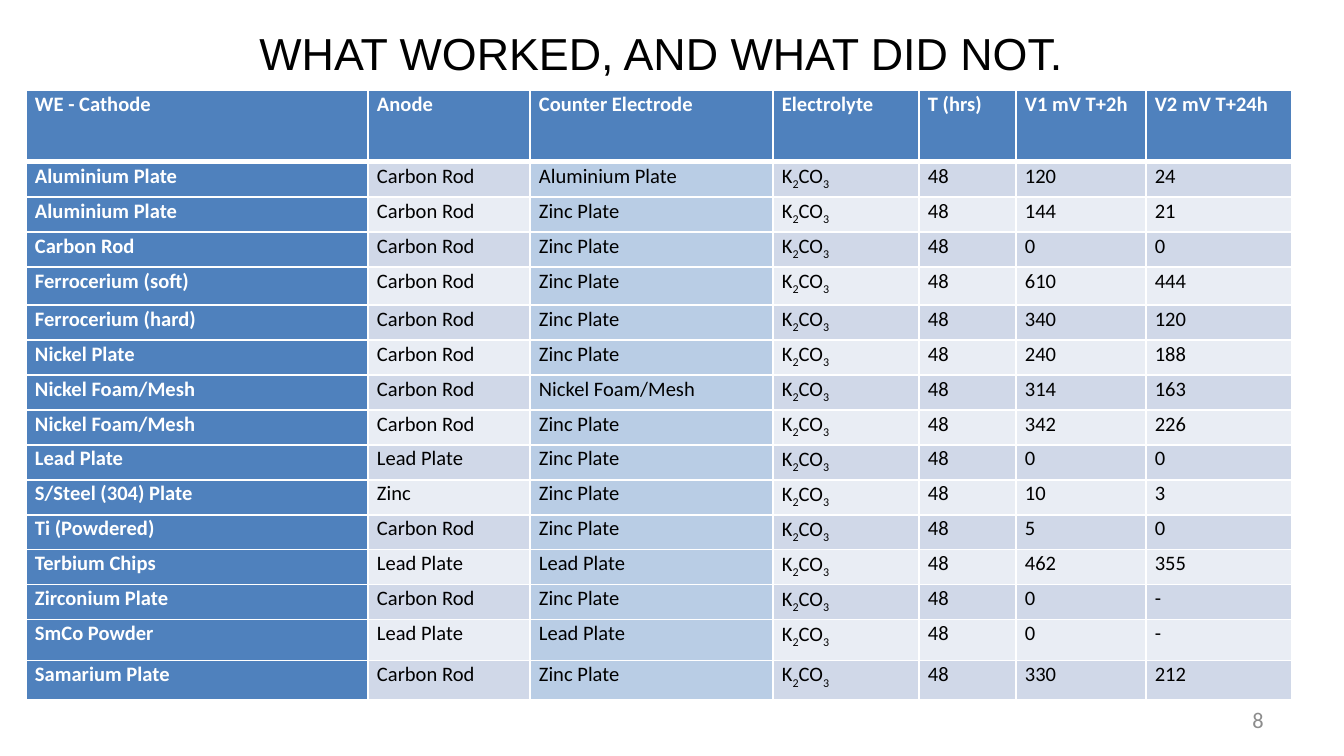
from lxml import etree
from pptx import Presentation
from pptx import util as u
from pptx.dml.color import RGBColor
from pptx.enum import shapes, text
from pptx.oxml import ns

PX = 9144000 / 1344

THEME = {
    "white": "FFFFFF", "black": "000000", "grey": "8C8C8C",
    "head": "4F81BD", "accent": "B9CDE5", "bands": ("E9EDF4", "D0D8E8"),
    "title": {"name": "Arial", "size": u.Pt(24)},
    "page": {"name": "Calibri", "size": u.Pt(12)},
    "cell": {"name": "Calibri", "size": u.Pt(11), "bold": False},
    "label": {"name": "Calibri", "size": u.Pt(11), "bold": True},
    "line": 1, "rule": 3,
}

COLS = (342, 162, 243, 146, 97, 130, 146)
ROWS = (72, *[35] * 3, 38, *[35] * 9, 41, 39)
HEADS = ("WE - Cathode", "Anode", "Counter Electrode", "Electrolyte",
         "T (hrs)", "V1 mV T+2h", "V2 mV T+24h")
SALT = "K2CO3"
HOURS = "48"
# cathode, anode, counter electrode, V1, V2
TESTS = (
    ("Aluminium Plate", "Carbon Rod", "Aluminium Plate", "120", "24"),
    ("Aluminium Plate", "Carbon Rod", "Zinc Plate", "144", "21"),
    ("Carbon Rod", "Carbon Rod", "Zinc Plate", "0", "0"),
    ("Ferrocerium (soft)", "Carbon Rod", "Zinc Plate", "610", "444"),
    ("Ferrocerium (hard)", "Carbon Rod", "Zinc Plate", "340", "120"),
    ("Nickel Plate", "Carbon Rod", "Zinc Plate", "240", "188"),
    ("Nickel Foam/Mesh", "Carbon Rod", "Nickel Foam/Mesh", "314", "163"),
    ("Nickel Foam/Mesh", "Carbon Rod", "Zinc Plate", "342", "226"),
    ("Lead Plate", "Lead Plate", "Zinc Plate", "0", "0"),
    ("S/Steel (304) Plate", "Zinc", "Zinc Plate", "10", "3"),
    ("Ti (Powdered)", "Carbon Rod", "Zinc Plate", "5", "0"),
    ("Terbium Chips", "Lead Plate", "Lead Plate", "462", "355"),
    ("Zirconium Plate", "Carbon Rod", "Zinc Plate", "0", "-"),
    ("SmCo Powder", "Lead Plate", "Lead Plate", "0", "-"),
    ("Samarium Plate", "Carbon Rod", "Zinc Plate", "330", "212"),
)


def px(n):
    return u.Emu(round(n * PX))


def rgb(code):
    return RGBColor.from_string(code)


def apply(item, values):
    for key, value in values.items():
        setattr(item, key, value)


def write(para, words, style, color):
    run = para.add_run()
    run.text = words
    apply(run.font, style)
    run.font.color.rgb = rgb(color)
    return run


def paint(item, color):
    item.fill.solid()
    item.fill.fore_color.rgb = rgb(color)


def edge(cell, side, width):
    line = etree.SubElement(cell._tc.get_or_add_tcPr(), ns.qn(f"a:ln{side}"),
                            w=str(u.Pt(width)))
    fill = etree.SubElement(line, ns.qn("a:solidFill"))
    etree.SubElement(fill, ns.qn("a:srgbClr"), val=THEME["white"])


def fill_cell(cell, words, row, col):
    label = row == 0 or col == 0
    for side in "LRTB":
        thick = (row, side) in ((0, "B"), (1, "T"))
        edge(cell, side, THEME["rule" if thick else "line"])
    if label:
        paint(cell, THEME["head"])
    else:
        paint(cell, THEME["accent"] if col == 2 else THEME["bands"][row % 2])
    apply(cell, {"margin_left": px(9), "margin_right": px(9),
                 "margin_top": 0, "margin_bottom": 0})
    para = cell.text_frame.paragraphs[0]
    para.line_spacing = 1.06
    style = THEME["label" if label else "cell"]
    color = THEME["white" if label else "black"]
    # The digits of the formula are subscripts.
    parts = ("K", "2", "CO", "3") if words == SALT else (words,)
    for part in parts:
        run = write(para, part, style, color)
        if len(parts) > 1 and part.isdigit():
            run._r.get_or_add_rPr().set("baseline", "-25000")


def add_grid(slide, box):
    grid = slide.shapes.add_table(len(ROWS), len(COLS), *map(px, box)).table
    apply(grid, {"first_row": False, "horz_banding": False})
    for col, wide in zip(grid.columns, COLS):
        col.width = px(wide)
    for row, high in zip(grid.rows, ROWS):
        row.height = px(high)
    lines = [HEADS] + [(*t[:3], SALT, HOURS, *t[3:]) for t in TESTS]
    for r, line in enumerate(lines):
        for c, words in enumerate(line):
            fill_cell(grid.cell(r, c), words, r, c)


def add_title(slide, box):
    bar = slide.shapes.add_shape(shapes.MSO_SHAPE.RECTANGLE, *map(px, box))
    bar.shadow.inherit = False
    bar.line.fill.background()
    paint(bar, THEME["white"])
    bar.text_frame.vertical_anchor = text.MSO_ANCHOR.MIDDLE
    para = bar.text_frame.paragraphs[0]
    para.alignment = text.PP_ALIGN.CENTER
    write(para, "WHAT WORKED, AND WHAT DID NOT.", THEME["title"], THEME["black"])


def add_page(slide, box):
    frame = slide.shapes.add_textbox(*map(px, box)).text_frame
    apply(frame, {"word_wrap": True,
                  "vertical_anchor": text.MSO_ANCHOR.MIDDLE})
    para = frame.paragraphs[0]
    para.alignment = text.PP_ALIGN.RIGHT
    write(para, "8", THEME["page"], THEME["grey"])


def main():
    deck = Presentation()
    apply(deck, {"slide_width": px(1344), "slide_height": px(756)})
    slide = deck.slides.add_slide(deck.slide_layouts[6])
    add_page(slide, (964, 700, 313, 40))
    add_grid(slide, (26, 90, sum(COLS), sum(ROWS)))
    add_title(slide, (24, 19, 1274, 67))
    deck.save("out.pptx")


if __name__ == "__main__":
    main()
